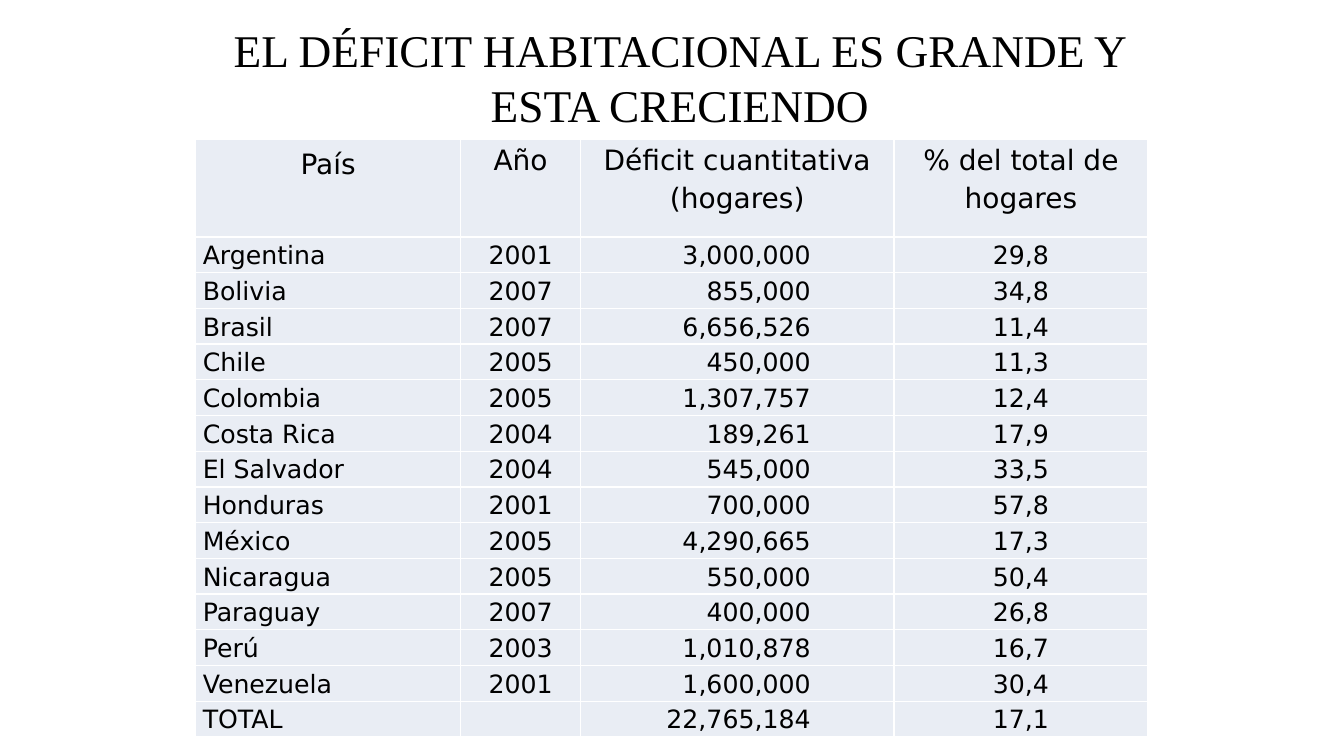
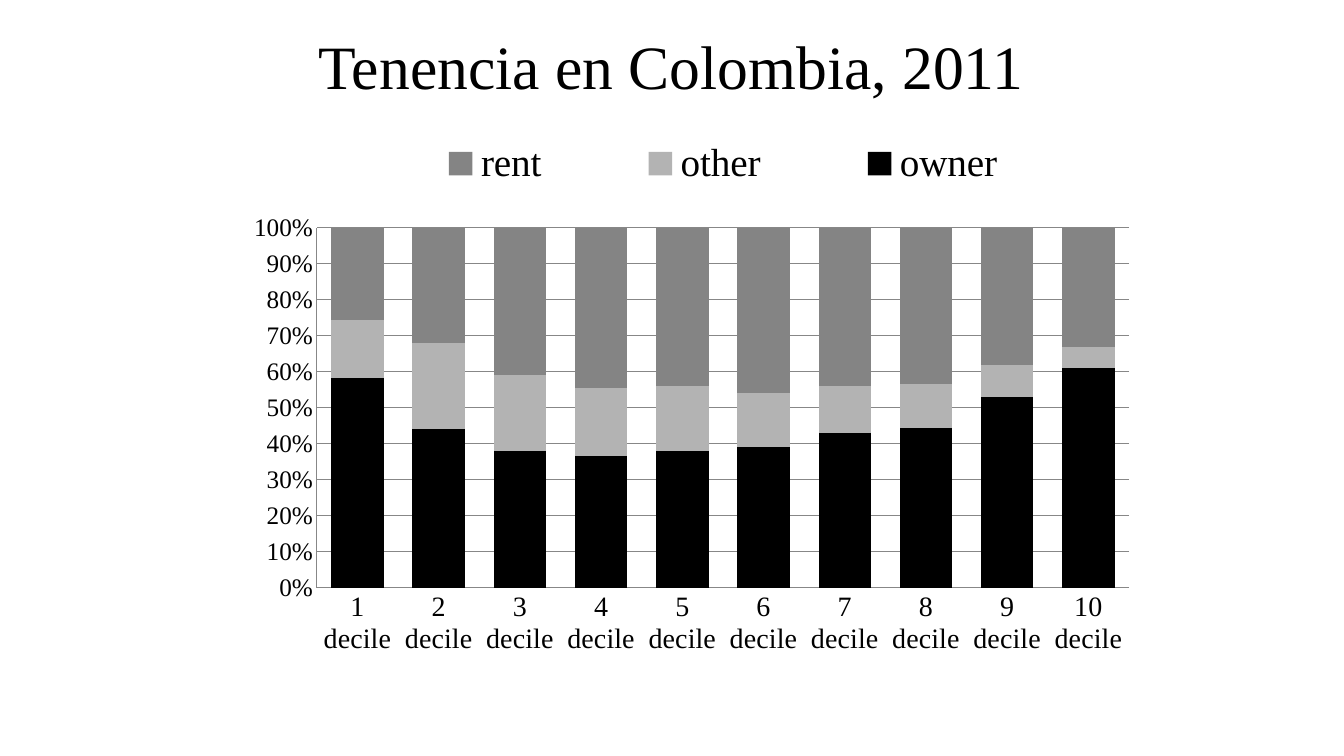
import dataclasses

import lxml.etree
import pptx
import pptx.chart.data
import pptx.dml.color
import pptx.enum.chart
import pptx.enum.text
import pptx.oxml
import pptx.oxml.ns
import pptx.util

Cm, Pt = pptx.util.Cm, pptx.util.Pt
Align = pptx.enum.text.PP_ALIGN
Anchor = pptx.enum.text.MSO_ANCHOR
qn = pptx.oxml.ns.qn


@dataclasses.dataclass(frozen=True)
class Theme:
    ink: str = "000000"
    paper: str = "FFFFFF"
    cell: str = "E9EDF4"
    axis: str = "878787"
    light: str = "B3B3B3"
    mid: str = "848484"
    serif: str = "Times New Roman"
    sans: str = "DejaVu Sans"
    small: float = 18
    label: float = 20
    legend: float = 28
    head: float = 32.4
    title: float = 44


def rgb(code):
    return pptx.dml.color.RGBColor.from_string(code)


class Deck:
    def __init__(self, theme):
        self.theme = theme
        self.file = pptx.Presentation()
        self.file.slide_width, self.file.slide_height = Cm(33.87), Cm(19.05)
        self.slide = None

    def start(self):
        self.slide = self.file.slides.add_slide(self.file.slide_layouts[5])

    def font(self, font, face, size):
        font.name, font.size, font.bold = face, Pt(size), False
        font.color.rgb = rgb(self.theme.ink)

    def title(self, text, box, size):
        shape = self.slide.shapes.title
        shape.left, shape.top, shape.width, shape.height = map(Cm, box)
        frame = shape.text_frame
        frame.text = text
        frame.word_wrap = True
        frame.auto_size = pptx.enum.text.MSO_AUTO_SIZE.NONE
        frame.vertical_anchor = Anchor.MIDDLE
        para = frame.paragraphs[0]
        para.alignment = Align.CENTER
        self.font(para.runs[0].font, self.theme.serif, size)

    # Tables
    def border(self, cell):
        props = cell._tc.get_or_add_tcPr()
        for side in ("lnL", "lnR", "lnT", "lnB"):
            line = lxml.etree.SubElement(props, qn("a:" + side), w=str(Pt(1)))
            fill = lxml.etree.SubElement(line, qn("a:solidFill"))
            lxml.etree.SubElement(fill, qn("a:srgbClr"), val=self.theme.paper)

    def cell(self, cell, text, size, align, right=0.18, top=0):
        cell.margin_left, cell.margin_right = Cm(0.18), Cm(right)
        cell.margin_top, cell.margin_bottom = Cm(top), 0
        cell.vertical_anchor = Anchor.TOP
        self.border(cell)
        cell.fill.solid()
        cell.fill.fore_color.rgb = rgb(self.theme.cell)
        para = cell.text_frame.paragraphs[0]
        para.text = text
        para.alignment, para.line_spacing = align, 1.15
        self.font(para.font, self.theme.sans, size)
        for run in para.runs:
            self.font(run.font, self.theme.sans, size)

    def table(self, heads, rows, box, widths, high, low):
        frame = self.slide.shapes.add_table(
            len(rows) + 1, len(heads), *map(Cm, box))
        table = frame.table
        table.first_row = table.horz_banding = False
        for col, width in zip(table.columns, widths):
            col.width = Cm(width)
        for num, row in enumerate(table.rows):
            row.height = Cm(low if num else high)
        for col, text in enumerate(heads):
            self.cell(table.cell(0, col), text, self.theme.label,
                      Align.CENTER, top=0 if col else 0.1)
        # Amounts line up on the right, inside a wide margin
        styles = ((Align.LEFT, 0.18), (Align.CENTER, 0.18),
                  (Align.RIGHT, 2.1), (Align.CENTER, 0.18))
        for num, row in enumerate(rows, 1):
            for col, (text, (align, right)) in enumerate(zip(row, styles)):
                self.cell(table.cell(num, col), text, self.theme.small,
                          align, right)

    # Charts
    def layout(self, box, inner=False):
        node = lxml.etree.Element(qn("c:layout"))
        manual = lxml.etree.SubElement(node, qn("c:manualLayout"))
        pairs = [("layoutTarget", "inner")] if inner else []
        pairs += [("xMode", "edge"), ("yMode", "edge")]
        pairs += zip("xywh", map(str, box))
        for tag, val in pairs:
            lxml.etree.SubElement(manual, qn("c:" + tag), val=val)
        return node

    def chart(self, cats, series, box, plot, key):
        theme = self.theme
        data = pptx.chart.data.CategoryChartData()
        data.categories = cats
        for name, vals, _ in series:
            data.add_series(name, vals)
        kind = pptx.enum.chart.XL_CHART_TYPE.COLUMN_STACKED_100
        chart = self.slide.shapes.add_chart(kind, *map(Cm, box), data).chart
        chart.has_title = False
        self.font(chart.font, theme.serif, theme.small)

        bars = chart.plots[0]
        bars.gap_width, bars.overlap = 55, 100
        bars.vary_by_categories = False
        for item, (_, _, color) in zip(bars.series, series):
            item.format.fill.solid()
            item.format.fill.fore_color.rgb = rgb(color)

        none = pptx.enum.chart.XL_TICK_MARK.NONE
        sizes = ((chart.category_axis, theme.label),
                 (chart.value_axis, theme.small))
        for axis, size in sizes:
            axis.major_tick_mark = axis.minor_tick_mark = none
            axis.format.line.color.rgb = rgb(theme.axis)
            self.font(axis.tick_labels.font, theme.serif, size)
        axis = chart.value_axis
        axis.major_unit = 0.1
        axis.tick_labels.number_format = "0%"
        axis.tick_labels.number_format_is_linked = False
        axis.has_major_gridlines = True
        axis.major_gridlines.format.line.color.rgb = rgb(theme.axis)

        chart.has_legend = True
        legend = chart.legend
        legend.position = pptx.enum.chart.XL_LEGEND_POSITION.RIGHT
        legend.include_in_layout = False
        self.font(legend.font, theme.serif, theme.legend)

        # Fixed places for the plot and the legend
        root = chart._chartSpace
        for old in root.xpath(".//c:plotArea/c:layout | .//c:legend/c:layout"):
            old.getparent().remove(old)
        root.xpath(".//c:plotArea")[0].insert(0, self.layout(plot, True))
        root.xpath(".//c:legendPos")[0].addnext(self.layout(key))


HEADS = ("País", "Año", "Déficit cuantitativa (hogares)",
         "% del total de hogares")
ROWS = (
    ("Argentina", "2001", "3,000,000", "29,8"),
    ("Bolivia", "2007", "855,000", "34,8"),
    ("Brasil", "2007", "6,656,526", "11,4"),
    ("Chile", "2005", "450,000", "11,3"),
    ("Colombia", "2005", "1,307,757", "12,4"),
    ("Costa Rica", "2004", "189,261", "17,9"),
    ("El Salvador", "2004", "545,000", "33,5"),
    ("Honduras", "2001", "700,000", "57,8"),
    ("México", "2005", "4,290,665", "17,3"),
    ("Nicaragua", "2005", "550,000", "50,4"),
    ("Paraguay", "2007", "400,000", "26,8"),
    ("Perú", "2003", "1,010,878", "16,7"),
    ("Venezuela", "2001", "1,600,000", "30,4"),
    ("TOTAL", "", "22,765,184", "17,1"),
)


def main():
    theme = Theme()
    deck = Deck(theme)

    # Housing deficit by country
    deck.start()
    deck.title("EL DÉFICIT HABITACIONAL ES GRANDE Y ESTA CRECIENDO",
               (4.93, 0.74, 24.4, 2.4), theme.head)
    deck.table(HEADS, ROWS, (4.93, 3.52, 24, 15), (6.68, 3.02, 7.9, 6.4),
               2.45, 0.9)

    # Tenure by income decile
    deck.start()
    deck.title("Tenencia en Colombia, 2011", (5.97, 0.33, 21.9, 2.6),
               theme.title)
    series = (
        ("owner", (59, 44, 38, 37, 38, 39, 43, 44, 53, 61), theme.ink),
        ("other", (16, 24, 21, 19, 18, 15, 13, 12, 9, 6), theme.light),
        ("rent", (26, 32, 41, 45, 44, 46, 44, 43, 38, 33), theme.mid),
    )
    deck.chart([f"{num} decile" for num in range(1, 11)], series,
               (5.13, 2.34, 23.8, 16.2), (0.12, 0.21, 0.86, 0.56),
               (0.16, 0.06, 0.78, 0.1))

    deck.file.save("out.pptx")


if __name__ == "__main__":
    main()
